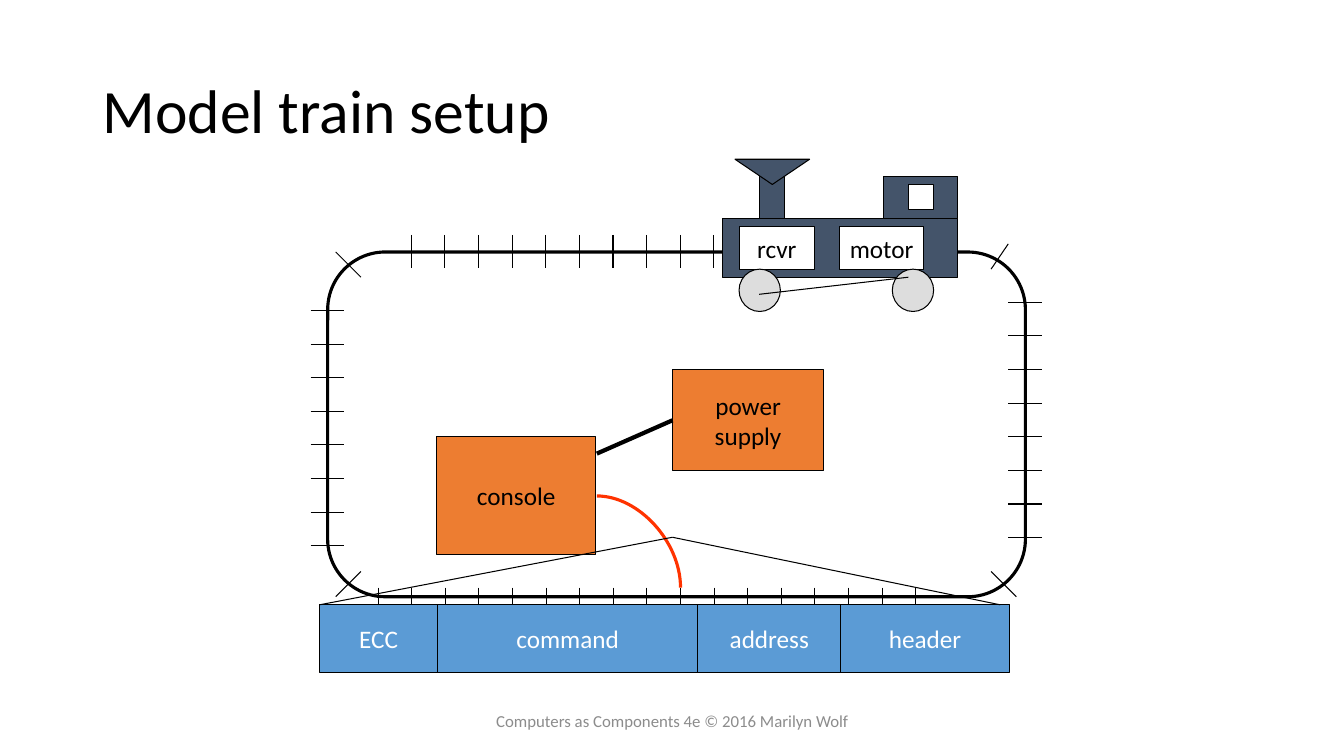
from dataclasses import dataclass

from lxml import etree
from pptx import Presentation
from pptx.dml.color import RGBColor
from pptx.enum.shapes import MSO_CONNECTOR, MSO_SHAPE
from pptx.enum.text import MSO_ANCHOR, PP_ALIGN
from pptx.oxml.ns import qn
from pptx.util import Inches, Pt

RECT, OVAL = MSO_SHAPE.RECTANGLE, MSO_SHAPE.OVAL
ROUNDED, TRIANGLE = MSO_SHAPE.ROUNDED_RECTANGLE, MSO_SHAPE.ISOSCELES_TRIANGLE
STRAIGHT, CURVE = MSO_CONNECTOR.STRAIGHT, MSO_CONNECTOR.CURVE
LEFT, CENTER = PP_ALIGN.LEFT, PP_ALIGN.CENTER
MIDDLE = MSO_ANCHOR.MIDDLE


@dataclass(frozen=True)
class Theme:
    font: str = "Calibri"
    ink: str = "000000"
    paper: str = "FFFFFF"
    engine: str = "44546A"
    wheel: str = "DDDDDD"
    device: str = "ED7D31"
    packet: str = "5B9BD5"
    signal: str = "FF3300"
    footer: str = "8C8C8C"
    title_size: float = 44
    label_size: float = 18
    footer_size: float = 12
    thin: float = 0.75
    rail: float = 2.25
    cable: float = 3


THEME = Theme()

# Content: boxes are (left, top, width, height), lines are (x1, y1, x2, y2)
TITLE = "Model train setup"
FOOTER = "Computers as Components 4e © 2016 Marilyn Wolf"
TITLE_BOX = (0.92, 0.4, 11.5, 1.45)
FOOTER_BOX = (4.42, 6.95, 4.5, 0.4)

TRACK = (3.25, 2.5, 6.92, 3.42)
TIE_LENGTH = 0.33
TIE_GAP = 1 / 3
TOP_TIES = (4.08, 2.33, 10)  # first x, top, count
BOTTOM_TIES = (3.75, 5.83, 17)
LEFT_TIES = (3.08, 3.08, 8)  # left, first y, count
RIGHT_TIES = (10, 3, 8)
CORNER_TIES = [
    (3.58, 5.67, 3.33, 5.92),
    (3.33, 2.5, 3.58, 2.75),
    (10, 2.42, 9.83, 2.67),
    (9.83, 5.67, 10.08, 5.92),
]

ENGINE_BODY = (7.17, 2.17, 2.33, 0.58)
CHIMNEY = (7.53, 1.75, 0.25, 0.42)
FUNNEL = (7.29, 1.58, 0.74, 0.25)
CAB = (8.76, 1.75, 0.74, 0.42)
CAB_WINDOW = (9.01, 1.83, 0.25, 0.25)
ENGINE_UNITS = {"rcvr": (7.33, 2.25, 0.75, 0.42), "motor": (8.33, 2.25, 0.83, 0.42)}
WHEELS = [(8.85, 2.67, 0.41, 0.42), (7.33, 2.67, 0.41, 0.42)]
WHEEL_ROD = (7.53, 2.92, 9.01, 2.75)

DEVICES = {"console": (4.33, 4.33, 1.58, 1.17), "power\nsupply": (6.67, 3.67, 1.5, 1)}
POWER_CABLE = (5.92, 4.5, 6.67, 4.17)
SIGNAL_WIRE = (5.92, 4.92, 6.75, 5.83)

PACKET_LEFT, PACKET_TOP, PACKET_HEIGHT = 3.17, 6, 0.67
PACKET_FIELDS = [("ECC", 1.17), ("command", 2.58), ("address", 1.42), ("header", 1.67)]
CALLOUT_TIP = (6.67, 5.33)
CALLOUT_ENDS = (3.17, 9.92)


def rgb(color):
    return RGBColor.from_string(color)


def inches(lengths):
    return [Inches(length) for length in lengths]


def write(frame, text, size, color, align=CENTER, wrap=True):
    frame.text = text
    frame.word_wrap = wrap
    frame.vertical_anchor = MIDDLE
    for paragraph in frame.paragraphs:
        paragraph.alignment = align
        for run in paragraph.runs:
            run.font.name = THEME.font
            run.font.size = Pt(size)
            run.font.color.rgb = rgb(color)


def draw_shape(slide, kind, box, fill=None, label="", color=THEME.ink, width=THEME.thin):
    shape = slide.shapes.add_shape(kind, *inches(box))
    shape.shadow.inherit = False
    if fill:
        shape.fill.solid()
        shape.fill.fore_color.rgb = rgb(fill)
    else:
        shape.fill.background()
    shape.line.color.rgb = rgb(THEME.ink)
    shape.line.width = Pt(width)
    if label:
        write(shape.text_frame, label, THEME.label_size, color, wrap=False)
    return shape


def draw_line(slide, ends, color=THEME.ink, width=THEME.thin, kind=STRAIGHT):
    line = slide.shapes.add_connector(kind, *inches(ends))
    line.line.color.rgb = rgb(color)
    line.line.width = Pt(width)
    etree.SubElement(line._element.spPr, qn("a:effectLst"))
    return line


def draw_ties(slide, left, top, count, along_x):
    for i in range(count):
        x = left + i * TIE_GAP * along_x
        y = top + i * TIE_GAP * (not along_x)
        draw_line(slide, (x, y, x + TIE_LENGTH * (not along_x), y + TIE_LENGTH * along_x))


def draw_track(slide):
    track = draw_shape(slide, ROUNDED, TRACK, width=THEME.rail)
    track.adjustments[0] = 0.167
    draw_ties(slide, *TOP_TIES, along_x=True)
    draw_ties(slide, *BOTTOM_TIES, along_x=True)
    draw_ties(slide, *LEFT_TIES, along_x=False)
    draw_ties(slide, *RIGHT_TIES, along_x=False)
    for tie in CORNER_TIES:
        draw_line(slide, tie)


def draw_engine(slide):
    for part in (ENGINE_BODY, CHIMNEY, CAB):
        draw_shape(slide, RECT, part, THEME.engine)
    draw_shape(slide, TRIANGLE, FUNNEL, THEME.engine).rotation = 180
    draw_shape(slide, RECT, CAB_WINDOW, THEME.paper)
    for name, box in ENGINE_UNITS.items():
        draw_shape(slide, RECT, box, THEME.paper, name)
    for wheel in WHEELS:
        draw_shape(slide, OVAL, wheel, THEME.wheel)
    draw_line(slide, WHEEL_ROD)


def draw_devices(slide):
    for name, box in DEVICES.items():
        draw_shape(slide, RECT, box, THEME.device, name)
    draw_line(slide, POWER_CABLE, width=THEME.cable)
    wire = draw_line(slide, SIGNAL_WIRE, THEME.signal, THEME.rail, CURVE)
    # A quarter bend: leaves the console sideways, meets the track downwards
    wire._element.spPr.find(qn("a:prstGeom")).set("prst", "curvedConnector2")


def draw_packet(slide):
    left = PACKET_LEFT
    for name, width in PACKET_FIELDS:
        box = (left, PACKET_TOP, width, PACKET_HEIGHT)
        draw_shape(slide, RECT, box, THEME.packet, name, THEME.paper)
        left += width
    for x in CALLOUT_ENDS:
        draw_line(slide, (*CALLOUT_TIP, x, PACKET_TOP))


def main():
    deck = Presentation()
    deck.slide_width, deck.slide_height = inches((13.33, 7.5))
    slide = deck.slides.add_slide(deck.slide_layouts[5])

    title = slide.shapes.title
    title.left, title.top, title.width, title.height = inches(TITLE_BOX)
    write(title.text_frame, TITLE, THEME.title_size, THEME.ink, LEFT)
    title.text_frame.paragraphs[0].line_spacing = 0.9

    draw_track(slide)
    draw_engine(slide)
    draw_devices(slide)
    draw_packet(slide)

    footer = slide.shapes.add_textbox(*inches(FOOTER_BOX))
    write(footer.text_frame, FOOTER, THEME.footer_size, THEME.footer)
    deck.save("out.pptx")


if __name__ == "__main__":
    main()
